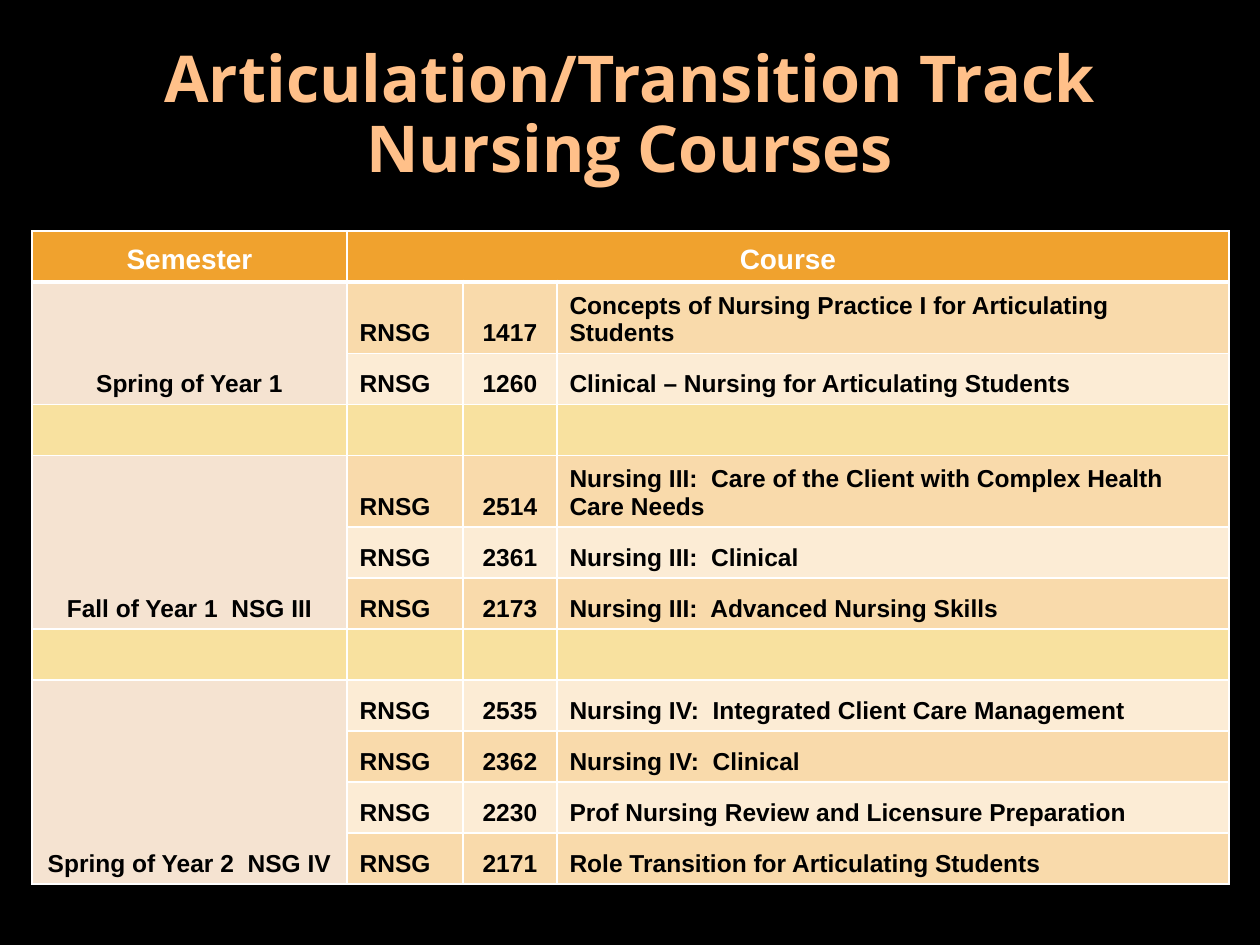
from dataclasses import dataclass

from lxml.etree import SubElement
from pptx import Presentation
from pptx.dml.color import RGBColor
from pptx.enum.text import MSO_ANCHOR, PP_ALIGN
from pptx.oxml.ns import qn
from pptx.util import Pt

PX = 914400 / 126


@dataclass(frozen=True)
class Theme:
    background: str = "000000"
    title: str = "FFC089"
    header: str = "F0A22E"
    semester: str = "F5E3D1"
    bands: tuple = ("F9DAAB", "FCECD5")
    gap: str = "F8E19F"
    light: str = "FFFFFF"
    dark: str = "000000"
    title_font: str = "Open Sans"
    table_font: str = "Arial"
    title_size: float = 36.9
    header_size: int = 16
    body_size: int = 14


THEME = Theme()
COLUMNS = (315, 116, 94, 672)
ROW_HEIGHT = 51
SUBJECT = "RNSG"
SEMESTERS = [
    ("Spring of Year 1", [
        ("1417", "Concepts of Nursing Practice I for Articulating Students"),
        ("1260", "Clinical – Nursing for Articulating Students"),
    ]),
    ("Fall of Year 1  NSG III", [
        ("2514", "Nursing III:  Care of the Client with Complex Health Care Needs"),
        ("2361", "Nursing III:  Clinical"),
        ("2173", "Nursing III:  Advanced Nursing Skills"),
    ]),
    ("Spring of Year 2  NSG IV", [
        ("2535", "Nursing IV:  Integrated Client Care Management"),
        ("2362", "Nursing IV:  Clinical"),
        ("2230", "Prof Nursing Review and Licensure Preparation"),
        ("2171", "Role Transition for Articulating Students"),
    ]),
]


def px(n):
    return round(n * PX)


def write(p, text, font, size, color, align):
    p.text = text
    p.alignment = align
    p.font.name = font
    p.font.size = Pt(size)
    p.font.bold = True
    p.font.color.rgb = RGBColor.from_string(color)


def add_title(slide, text):
    tf = slide.shapes.add_textbox(px(63), px(38), px(1134), px(157)).text_frame
    tf.word_wrap = True
    tf.vertical_anchor = MSO_ANCHOR.MIDDLE
    p = tf.paragraphs[0]
    write(p, text, THEME.title_font, THEME.title_size, THEME.title, PP_ALIGN.CENTER)
    p.line_spacing = 0.9


def set_borders(cell, top=1, bottom=1):
    """Draw the four cell edges; widths are in points."""
    tc_pr = cell._tc.get_or_add_tcPr()
    for tag, width in (("lnL", 1), ("lnR", 1), ("lnT", top), ("lnB", bottom)):
        ln = SubElement(tc_pr, qn(f"a:{tag}"), w=str(Pt(width)))
        fill = SubElement(ln, qn("a:solidFill"))
        SubElement(fill, qn("a:srgbClr"), val=THEME.light)


def fill_cell(cell, fill, text="", align=PP_ALIGN.LEFT,
              size=THEME.body_size, color=THEME.dark):
    cell.fill.solid()
    cell.fill.fore_color.rgb = RGBColor.from_string(fill)
    cell.vertical_anchor = MSO_ANCHOR.BOTTOM
    write(cell.text_frame.paragraphs[0], text, THEME.table_font, size, color, align)


def fill_header(table):
    table.cell(0, 1).merge(table.cell(0, 3))
    for col, text in enumerate(("Semester", "Course")):
        fill_cell(table.cell(0, col), THEME.header, text, PP_ALIGN.CENTER,
                  THEME.header_size, THEME.light)


def fill_semesters(table):
    """Bands alternate from course to course, skipping the gap rows."""
    row, course = 1, 0
    for semester, courses in SEMESTERS:
        if row > 1:
            for col in range(len(COLUMNS)):
                fill_cell(table.cell(row, col), THEME.gap)
            row += 1
        table.cell(row, 0).merge(table.cell(row + len(courses) - 1, 0))
        fill_cell(table.cell(row, 0), THEME.semester, semester, PP_ALIGN.CENTER)
        for number, name in courses:
            band = THEME.bands[course % 2]
            fill_cell(table.cell(row, 1), band, SUBJECT)
            fill_cell(table.cell(row, 2), band, number, PP_ALIGN.CENTER)
            fill_cell(table.cell(row, 3), band, name)
            row, course = row + 1, course + 1


def add_course_table(slide):
    n_rows = sum(len(courses) + 1 for _, courses in SEMESTERS)
    table = slide.shapes.add_table(
        n_rows, len(COLUMNS), px(32), px(231),
        px(sum(COLUMNS)), px(n_rows * ROW_HEIGHT)).table
    for column, width in zip(table.columns, COLUMNS):
        column.width = px(width)
    for i, row in enumerate(table.rows):
        row.height = px(ROW_HEIGHT)
        for cell in row.cells:
            set_borders(cell, top=3 if i == 1 else 1, bottom=3 if i == 0 else 1)
    fill_header(table)
    fill_semesters(table)


def main():
    prs = Presentation()
    prs.slide_width, prs.slide_height = px(1260), px(945)
    slide = prs.slides.add_slide(prs.slide_layouts[6])
    background = slide.background.fill
    background.solid()
    background.fore_color.rgb = RGBColor.from_string(THEME.background)
    add_title(slide, "Articulation/Transition Track Nursing Courses")
    add_course_table(slide)
    prs.save("out.pptx")


if __name__ == "__main__":
    main()
